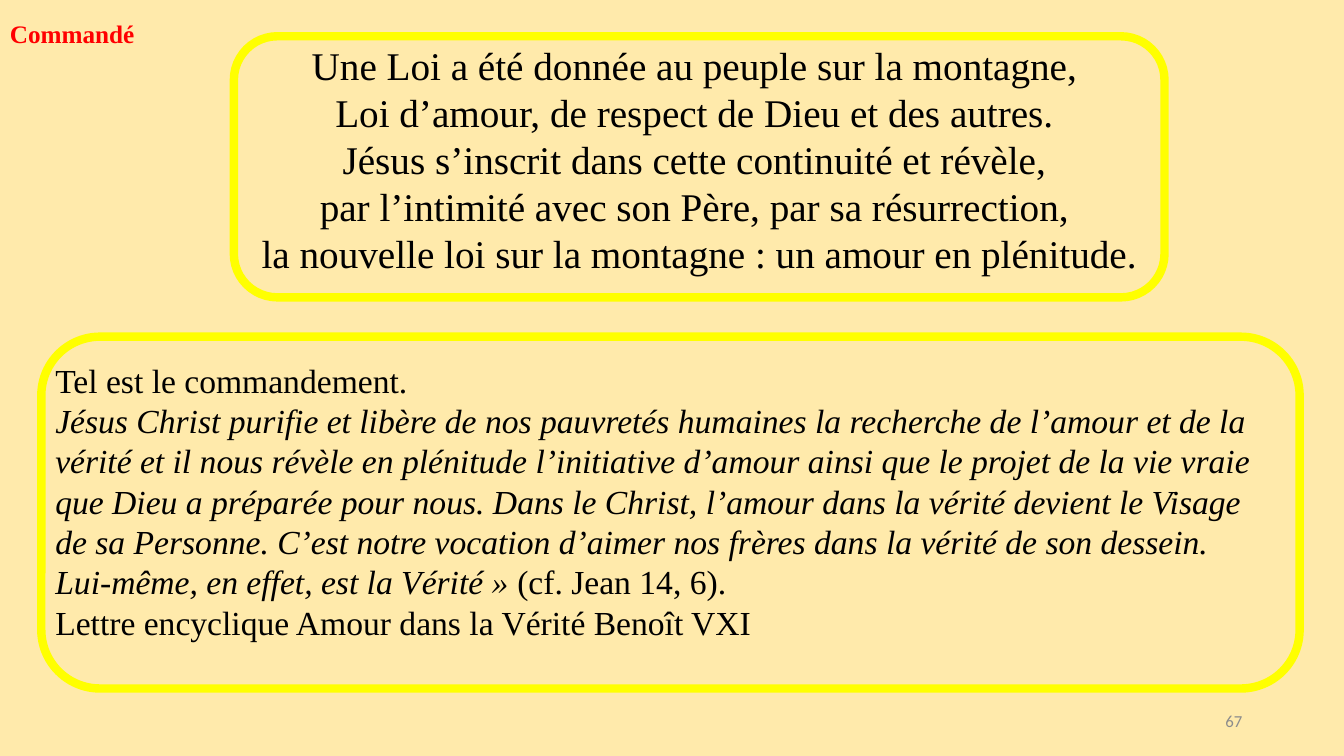
import pptx
import pptx.util
import pptx.dml.color
import pptx.enum.shapes
import pptx.enum.text

Inches = pptx.util.Inches
ALIGN = pptx.enum.text.PP_ALIGN
ANCHOR = pptx.enum.text.MSO_ANCHOR
SERIF = "Times New Roman"

LAW = [
    "Une Loi a été donnée au peuple sur la montagne, ",
    "Loi d’amour, de respect de Dieu et des autres. ",
    "Jésus s’inscrit dans cette continuité et révèle, ",
    "par l’intimité avec son Père, par sa résurrection, ",
    "la nouvelle loi sur la montagne : un amour en plénitude. ",
]
QUOTE = (
    "Jésus Christ purifie et libère de nos pauvretés humaines la recherche "
    "de l’amour et de la vérité et il nous révèle en plénitude l’initiative "
    "d’amour ainsi que le projet de la vie vraie que Dieu a préparée pour nous. "
    "Dans le Christ, l’amour dans la vérité devient le Visage de sa Personne. "
    "C’est notre vocation d’aimer nos frères dans la vérité de son dessein. "
    "Lui-même, en effet, est la Vérité » "
)
LETTER = [
    "Tel est le commandement.",
    [(QUOTE, {"italic": True}), ("(cf. Jean 14, 6).", {})],
    "Lettre encyclique Amour dans la Vérité Benoît VXI",
]


def paint(target, color):
    target.rgb = pptx.dml.color.RGBColor.from_string(color)


def style(font, size, color="000000", **values):
    values = {"name": SERIF, "size": pptx.util.Pt(size), **values}
    for key, value in values.items():
        setattr(font, key, value)
    paint(font.color, color)


def add_text(shapes, place, lines, size, align=ALIGN.LEFT, anchor=ANCHOR.TOP, **look):
    """Add a text box; a line is a string or a list of (text, format) runs."""
    box = shapes.add_textbox(*map(Inches, place))
    frame = box.text_frame
    frame.word_wrap = True
    frame.vertical_anchor = anchor
    for index, line in enumerate(lines):
        para = frame.paragraphs[0] if index == 0 else frame.add_paragraph()
        para.alignment = align
        runs = [(line, {})] if isinstance(line, str) else line
        for text, extra in runs:
            run = para.add_run()
            run.text = text
            style(run.font, size, **{**look, **extra})


def add_panel(slide, border, place, lines, size, align=ALIGN.LEFT):
    """Group a yellow rounded border with its text."""
    shapes = slide.shapes.add_group_shape().shapes
    kind = pptx.enum.shapes.MSO_SHAPE.ROUNDED_RECTANGLE
    shape = shapes.add_shape(kind, *map(Inches, border))
    shape.shadow.inherit = False
    shape.fill.background()
    shape.line.width = pptx.util.Pt(6)
    shape.line.fill.solid()
    paint(shape.line.color, "FFFF00")
    add_text(shapes, place, lines, size, align)


def main():
    deck = pptx.Presentation()
    deck.slide_width, deck.slide_height = Inches(13.33), Inches(7.5)
    slide = deck.slides.add_slide(deck.slide_layouts[6])
    fill = slide.background.fill
    fill.solid()
    paint(fill.fore_color, "FFEAAB")

    add_text(slide.shapes, (9.42, 6.95, 3, 0.4), ["67"], 12, ALIGN.RIGHT,
             ANCHOR.MIDDLE, name="Calibri", color="8C8C8C")
    add_panel(slide, (2.32, 0.36, 9.23, 2.59), (2.49, 0.36, 8.89, 2.29),
              LAW, 28, ALIGN.CENTER)
    add_text(slide.shapes, (0, 0.13, 1.53, 0.4), ["Commandé"], 18,
             color="FF0000", bold=True)
    add_panel(slide, (0.41, 3.34, 12.48, 3.49), (0.45, 3.52, 12.19, 2.93),
              LETTER, 24)
    deck.save("out.pptx")


if __name__ == "__main__":
    main()
